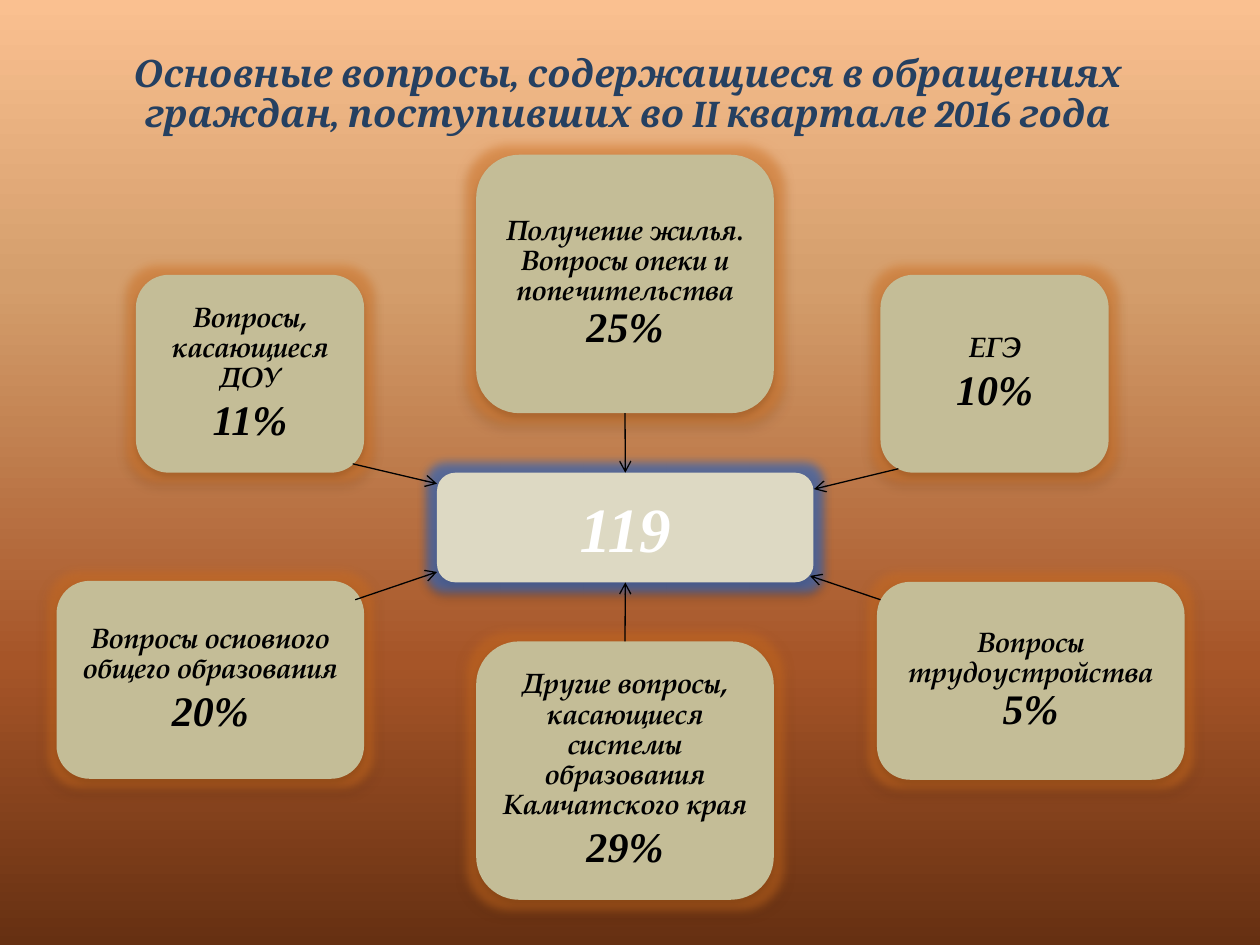
from lxml.etree import SubElement
from pptx import Presentation
from pptx.dml.color import RGBColor
from pptx.enum.shapes import MSO_CONNECTOR, MSO_SHAPE
from pptx.enum.text import MSO_ANCHOR, PP_ALIGN
from pptx.oxml.ns import qn
from pptx.util import Cm, Pt

NAVY = RGBColor(0x25, 0x40, 0x61)
BLACK = RGBColor(0x00, 0x00, 0x00)
WHITE = RGBColor(0xFF, 0xFF, 0xFF)
SAND = RGBColor(0xC4, 0xBD, 0x97)
LIGHT_SAND = RGBColor(0xDD, 0xD9, 0xC3)
ORANGE_GLOW = RGBColor(0xE8, 0x7A, 0x20)
BLUE_GLOW = RGBColor(0x2A, 0x6B, 0xD0)
BACKGROUND_STOPS = [
    (0, RGBColor(0xFA, 0xC0, 0x90)),
    (30, RGBColor(0xD4, 0x9E, 0x6C)),
    (70, RGBColor(0xA6, 0x55, 0x28)),
    (100, RGBColor(0x66, 0x30, 0x12)),
]

TITLE_FONT = {"name": "Cambria", "size": Pt(21.6), "color": NAVY}
TOTAL_FONT = {"name": "Times New Roman", "size": Pt(36), "color": WHITE}
TOPIC_FONT = {"name": "TeX Gyre Pagella", "size": Pt(16), "color": BLACK}
SHARE_FONT = {"name": "Times New Roman", "size": Pt(24), "color": BLACK}


def write_text(shape, paragraphs, line_spacing=0.9, space_after=0):
    """Fill a shape with centred paragraphs, each a list of (text, format) runs."""
    frame = shape.text_frame
    frame.word_wrap = True
    frame.vertical_anchor = MSO_ANCHOR.MIDDLE
    for index, runs in enumerate(paragraphs):
        paragraph = frame.add_paragraph() if index else frame.paragraphs[0]
        paragraph.alignment = PP_ALIGN.CENTER
        paragraph.line_spacing = line_spacing
        paragraph.space_after = Pt(space_after)
        for text, font_format in runs:
            run = paragraph.add_run()
            run.text = text
            run.font.bold = run.font.italic = True
            for key, value in font_format.items():
                if key == "color":
                    run.font.color.rgb = value
                else:
                    setattr(run.font, key, value)


def add_box(slide, position, fill, glow, glow_alpha):
    """Add a rounded box with a coloured glow and a soft shadow below it."""
    shape = slide.shapes.add_shape(
        MSO_SHAPE.FLOWCHART_ALTERNATE_PROCESS, *[Cm(value) for value in position])
    shape.fill.solid()
    shape.fill.fore_color.rgb = fill
    shape.line.fill.background()
    for side in ("left", "right", "top", "bottom"):
        setattr(shape.text_frame, f"margin_{side}", Cm(0.15))
    shape.shadow.inherit = False
    effects = shape._element.spPr.find(qn("a:effectLst"))
    glow_effect = SubElement(effects, qn("a:glow"), rad=str(Pt(11)))
    shadow = SubElement(effects, qn("a:outerShdw"), blurRad=str(Pt(3.5)),
                        dist=str(Pt(2.2)), dir="5400000", rotWithShape="0")
    for effect, color, alpha in ((glow_effect, glow, glow_alpha), (shadow, BLACK, 32)):
        color_element = SubElement(effect, qn("a:srgbClr"), val=str(color))
        SubElement(color_element, qn("a:alpha"), val=str(alpha * 1000))
    return shape


presentation = Presentation()
presentation.slide_width = Cm(25.4)
presentation.slide_height = Cm(19.05)
slide = presentation.slides.add_slide(presentation.slide_layouts[6])

# Background: four-colour gradient from top to bottom
background_fill = slide.background.fill
background_fill.gradient()
background_fill.gradient_angle = 270
stop_list = next(slide.element.iter(qn("a:gsLst")))
for stop in list(stop_list):
    stop_list.remove(stop)
for percent, color in BACKGROUND_STOPS:
    stop = SubElement(stop_list, qn("a:gs"), pos=str(percent * 1000))
    SubElement(stop, qn("a:srgbClr"), val=str(color))

# Title
title = slide.shapes.add_textbox(Cm(0.61), Cm(1.12), Cm(24.1), Cm(1.6))
write_text(title, [[("Основные вопросы, содержащиеся в обращениях граждан, "
                     "поступивших во II квартале 2016 года", TITLE_FONT)]])

# Total number of appeals in the centre
total = add_box(slide, (8.81, 9.53, 7.59, 2.21), LIGHT_SAND, BLUE_GLOW, 60)
write_text(total, [[("119", TOTAL_FONT)]], line_spacing=1.0)

# Topic boxes: size, position, topic, share, share in its own paragraph
SMALL, TALL, WIDE = (4.6, 3.99), (6.0, 5.21), (6.2, 3.99)
topics = [
    (SMALL, (2.74, 5.54), "Вопросы, касающиеся ДОУ", "11%", True),
    (TALL, (9.6, 3.12), "Получение жилья. Вопросы опеки и попечительства ", "25%", False),
    (WIDE, (1.14, 11.71), "Вопросы основного общего образования", "20%", True),
    (TALL, (9.6, 12.93), "Другие вопросы, касающиеся системы образования Камчатского края",
     "29%", True),
    (SMALL, (17.75, 5.54), "ЕГЭ", "10%", True),
    (WIDE, (17.68, 11.73), "Вопросы трудоустройства ", "5%", False),
]
boxes = []
for size, position, topic, share, separate in topics:
    box = add_box(slide, position + size, SAND, ORANGE_GLOW, 40)
    topic_run, share_run = (topic, TOPIC_FONT), (share, SHARE_FONT)
    paragraphs = [[topic_run], [share_run]] if separate else [[topic_run, share_run]]
    write_text(box, paragraphs, space_after=3)
    boxes.append(box)

# Arrows towards the centre: ends, then the joined box with its two sides
arrows = [
    ((7.11, 9.35, 8.81, 9.75), None),
    ((18.11, 9.45, 16.41, 9.86), None),
    ((12.6, 8.33, 12.6, 9.53), (boxes[1], 2, 0)),
    ((12.6, 12.93, 12.6, 11.74), (boxes[3], 0, 2)),
    ((7.16, 12.09, 8.81, 11.53), None),
    ((17.75, 12.09, 16.33, 11.61), None),
]
for ends, joint in arrows:
    arrow = slide.shapes.add_connector(
        MSO_CONNECTOR.STRAIGHT, *[Cm(value) for value in ends])
    if joint:
        box, box_side, total_side = joint
        arrow.begin_connect(box, box_side)
        arrow.end_connect(total, total_side)
    arrow.line.color.rgb = BLACK
    arrow.line.width = Pt(0.75)
    SubElement(arrow.line._get_or_add_ln(), qn("a:tailEnd"), type="arrow")
    SubElement(arrow._element.spPr, qn("a:effectLst"))

presentation.save("out.pptx")
